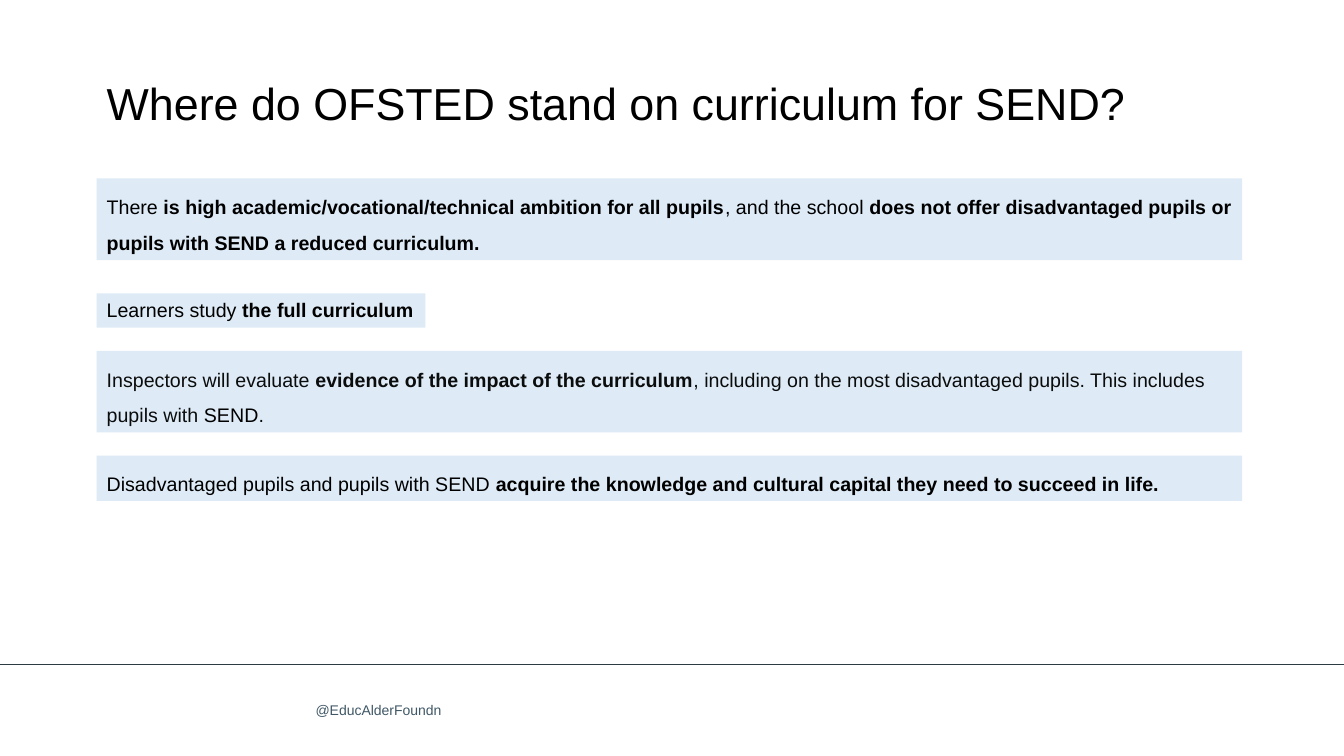
import pptx
import pptx.util
import pptx.dml.color
import pptx.enum.shapes
import pptx.enum.text
import pptx.oxml.ns
import lxml.etree

Inches = pptx.util.Inches
Pt = pptx.util.Pt
RGBColor = pptx.dml.color.RGBColor

BLACK = RGBColor(0x00, 0x00, 0x00)
INK = RGBColor(0x0B, 0x0C, 0x0C)
PALE_BLUE = RGBColor(0xDE, 0xEB, 0xF7)
RULE_GREY = RGBColor(0x2C, 0x3A, 0x42)
HANDLE_GREY = RGBColor(0x40, 0x58, 0x66)

LEFT = 0.96
WIDE = 11.36

presentation = pptx.Presentation()
presentation.slide_width = Inches(13.33)
presentation.slide_height = Inches(7.5)
slide = presentation.slides.add_slide(presentation.slide_layouts[6])


def add_text(left, top, width, height, runs, size, wrap=True):
    """Add a growing text box; runs are (text, bold, colour)."""
    box = slide.shapes.add_textbox(
        Inches(left), Inches(top), Inches(width), Inches(height))
    frame = box.text_frame
    frame.word_wrap = wrap
    frame.auto_size = pptx.enum.text.MSO_AUTO_SIZE.SHAPE_TO_FIT_TEXT
    for text, bold, colour in runs:
        run = frame.paragraphs[0].add_run()
        run.text = text
        run.font.name = "Arial"
        run.font.size = Pt(size)
        run.font.bold = bold
        run.font.color.rgb = colour
    return box


# Footer rule
footer_rule = slide.shapes.add_connector(
    pptx.enum.shapes.MSO_CONNECTOR.STRAIGHT,
    Inches(0), Inches(6.59), Inches(13.33), Inches(6.59))
footer_rule.line.color.rgb = RULE_GREY
footer_rule.line.width = Pt(0.75)
lxml.etree.SubElement(footer_rule.element.spPr, pptx.oxml.ns.qn("a:effectLst"))

# Footer handle
handle = add_text(3.12, 6.98, 1.48, 0.13,
                  [("@EducAlderFoundn", False, HANDLE_GREY)], 10)
handle_frame = handle.text_frame
handle_frame.margin_left = handle_frame.margin_right = 0
handle_frame.margin_top = handle_frame.margin_bottom = 0
handle_frame.paragraphs[0].line_spacing = 0.91
handle_frame.paragraphs[0]._p.get_or_add_pPr().set("marL", str(Inches(0.01)))

# Title
add_text(LEFT, 0.7, 11.97, 0.64,
         [("Where do OFSTED stand on curriculum for SEND?", False, BLACK)], 32)

# Statements: top, width, height, wrap, line spacing, runs
statements = [
    (1.77, WIDE, 0.81, True, 1.5, [
        ("There ", False, BLACK),
        ("is high academic/vocational/technical ambition for all pupils",
         True, BLACK),
        (", and the school ", False, BLACK),
        ("does not offer disadvantaged pupils or pupils with SEND "
         "a reduced curriculum.", True, BLACK)]),
    (2.91, 3.26, 0.34, False, 1.0, [
        ("Learners study ", False, BLACK),
        ("the full curriculum", True, BLACK)]),
    (3.48, WIDE, 0.81, True, 1.5, [
        ("Inspectors will evaluate ", False, INK),
        ("evidence of the impact of the curriculum", True, INK),
        (", including on the most disadvantaged pupils. "
         "This includes pupils with ", False, INK),
        ("SEND", False, BLACK),
        (".", False, INK)]),
    (4.52, WIDE, 0.45, True, 1.5, [
        ("Disadvantaged pupils and pupils with SEND ", False, BLACK),
        ("acquire the knowledge and cultural capital they need "
         "to succeed in life.", True, BLACK)]),
]
for top, width, height, wrap, spacing, runs in statements:
    statement = add_text(LEFT, top, width, height, runs, 14, wrap)
    statement.fill.solid()
    statement.fill.fore_color.rgb = PALE_BLUE
    statement.text_frame.paragraphs[0].line_spacing = spacing

presentation.save("out.pptx")
